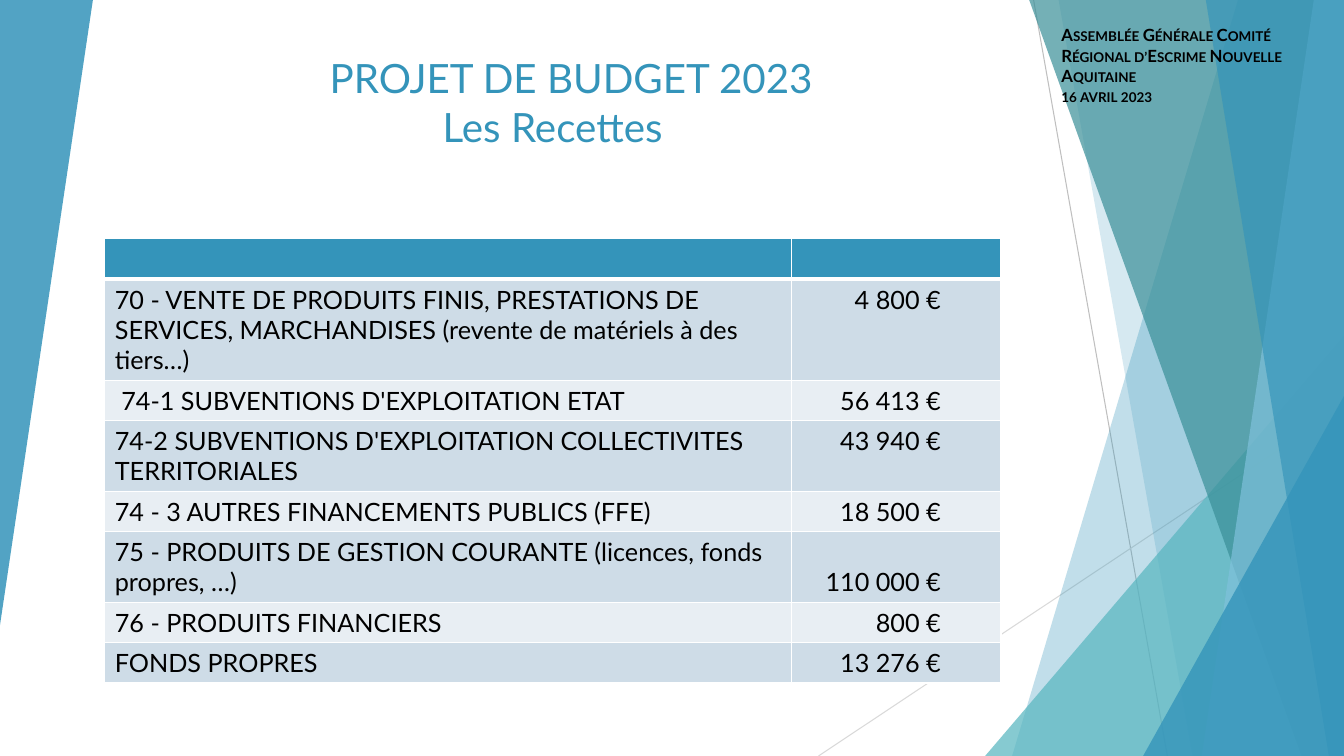
from lxml.etree import SubElement as Sub
from pptx import Presentation
from pptx.dml.color import RGBColor
from pptx.enum.shapes import MSO_CONNECTOR as Link, MSO_SHAPE as Kind
from pptx.enum.text import MSO_ANCHOR as Anchor, MSO_AUTO_SIZE as Auto, PP_ALIGN as Align
from pptx.oxml import parse_xml
from pptx.oxml.ns import nsdecls, qn
from pptx.util import Cm, Pt

# Content
FONT = "Lato"
TITLE = ["PROJET DE BUDGET 2023", "Les Recettes"]
EVENT = ["Assemblée Générale Comité Régional d’Escrime Nouvelle Aquitaine", "16 avril 2023"]
ROWS = [  # label, amount, lines of text
    ("", "", 1),
    ("70 - VENTE DE PRODUITS FINIS, PRESTATIONS DE SERVICES, MARCHANDISES "
     "(revente de matériels à des tiers…)", "4 800 €", 3),
    (" 74-1 SUBVENTIONS D'EXPLOITATION ETAT", "56 413 €", 1),
    ("74-2 SUBVENTIONS D'EXPLOITATION COLLECTIVITES TERRITORIALES", "43 940 €", 2),
    ("74 - 3 AUTRES FINANCEMENTS PUBLICS (FFE)", "18 500 €", 1),
    ("75 - PRODUITS DE GESTION COURANTE (licences, fonds propres, …)", "110 000 €", 2),
    ("76 - PRODUITS FINANCIERS", "800 €", 1),
    ("FONDS PROPRES", "13 276 €", 1),
]
LOW = 5  # row whose amount sits at the bottom

# Decor, in cm
W, H = 33.86, 19.05
LINES = [((26.04, 0), (29.41, H), "BFBFBF"), ((W, 10.24), (20.62, H), "D9D9D9")]
DECOR = [  # slab: top x, bottom x; wedge: left, top, width, height, turn
    ("slab", (31.19, 25.5), "3494BA", 30),
    ("slab", (26.67, 30.05), "3494BA", 20),
    ("wedge", (24.82, 8.46, 9.04, 10.59, 0), "58B6C0", 72),
    ("slab", (25.93, 32.79), "3A8F98", 70),
    ("slab", (33.1, 30.28), "7FC1DB", 70),
    ("slab", (30.38, 33.48), "3494BA", 65),
    ("wedge", (28.8, 9.98, 5.06, 9.07, 0), "3494BA", 80),
    ("wedge", (0, 0, 2.34, 15.75, 180), "3494BA", 85),
]


def tint(code):
    return RGBColor.from_string(code)


def style(para, size, code, bold=None):
    font = para.font
    font.name, font.size, font.bold = FONT, Pt(size), bold
    font.color.rgb = tint(code)


def edge(cell, tops, lows):
    """White borders: one point on the sides, given widths above and below."""
    props = cell._tc.get_or_add_tcPr()
    sides = [("lnL", 1), ("lnR", 1), ("lnT", tops), ("lnB", lows)]
    for spot, (tag, width) in enumerate(sides):
        props.insert(spot, parse_xml(
            f'<a:{tag} {nsdecls("a")} w="{Pt(width)}"><a:solidFill>'
            f'<a:srgbClr val="FFFFFF"/></a:solidFill></a:{tag}>'))


deck = Presentation()
deck.slide_width, deck.slide_height = Cm(W), Cm(H)
slide = deck.slides.add_slide(deck.slide_layouts[5])
shapes = slide.shapes

# Thin lines
for start, end, code in LINES:
    line = shapes.add_connector(Link.STRAIGHT, *map(Cm, start + end))
    line.line.color.rgb = tint(code)
    line.line.width = Pt(0.75)
    Sub(line._element.spPr, qn("a:effectLst"))

# Translucent slabs and wedges
for kind, place, code, alpha in DECOR:
    if kind == "slab":
        top, low = place
        pen = shapes.build_freeform(Cm(top), 0)
        pen.add_line_segments([(Cm(x), Cm(y)) for x, y in [(W, 0), (W, H), (low, H)]])
        part = pen.convert_to_shape()
    else:
        *box, turn = place
        part = shapes.add_shape(Kind.ISOSCELES_TRIANGLE, *map(Cm, box))
        part.adjustments[0] = 1
        part.rotation = turn
    part.shadow.inherit = False
    part.line.fill.background()
    part.fill.solid()
    part.fill.fore_color.rgb = tint(code)
    clr = part._element.spPr.find(qn("a:solidFill"))[0]
    Sub(clr, qn("a:alpha")).set("val", str(alpha * 1000))

# Title, second line indented
title = shapes.title
title.left, title.top, title.width, title.height = map(Cm, (8.05, 1.14, 21.56, 2.77))
frame = title.text_frame
frame.text = "\n".join(TITLE)
frame.auto_size = Auto.NONE
frame.vertical_anchor = Anchor.BOTTOM
for para, shift in zip(frame.paragraphs, (0, 2.85)):
    para.alignment = Align.LEFT
    para.space_before = Pt(0)
    style(para, 28.8, "3494BA")
    para._p.get_or_add_pPr().set("marL", str(Cm(shift)))

# Budget table
heights = [0.25 + 0.765 * count for *_, count in ROWS]
table = shapes.add_table(len(ROWS), 2, Cm(2.64), Cm(6.02), Cm(22.58), Cm(sum(heights))).table
for col, width in zip(table.columns, (17.3, 5.28)):
    col.width = Cm(width)
for r, (label, amount, _) in enumerate(ROWS):
    table.rows[r].height = Cm(heights[r])
    back = "3494BA" if r == 0 else ("E8EEF3", "CEDCE7")[r % 2]
    for c, text in enumerate((label, amount)):
        cell = table.cell(r, c)
        cell.text = text
        cell.fill.solid()
        cell.fill.fore_color.rgb = tint(back)
        edge(cell, 3 if r == 1 else 1, 3 if r == 0 else 1)
        para = cell.text_frame.paragraphs[0]
        style(para, 18, "000000", False)
        if c == 1:
            para.alignment = Align.RIGHT
            cell.margin_right = Cm(1.52)
            cell.vertical_anchor = Anchor.BOTTOM if r == LOW else Anchor.TOP

# Event name in small capitals
note = shapes.add_textbox(*map(Cm, (26.49, 0.51, 7.37, 1.8))).text_frame
note.word_wrap = True
note.text = "\n".join(EVENT)
for para in note.paragraphs:
    style(para, 12, "000000", True)
    for run in para.runs:
        run._r.get_or_add_rPr().set("cap", "small")

deck.save("out.pptx")
